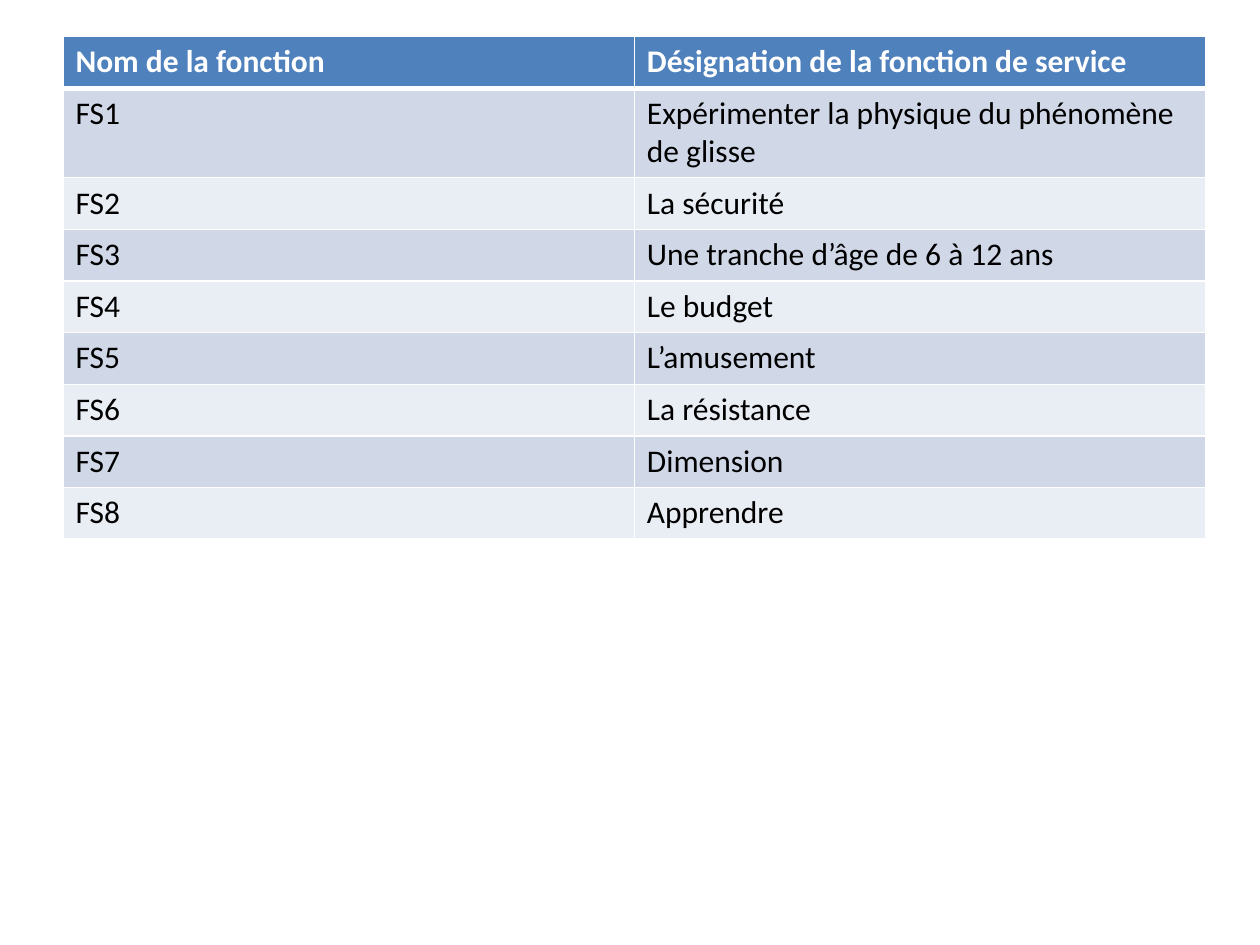
import pptx
import pptx.util
import pptx.dml.color
import pptx.oxml
from dataclasses import dataclass
from lxml import etree
from pptx.util import Inches


@dataclass(frozen=True)
class Theme:
    font: str = "Calibri"
    size: int = 18
    header_fill: str = "4F81BD"
    header_text: str = "FFFFFF"
    body_text: str = "000000"
    bands: tuple = ("D0D8E8", "E9EDF4")
    border: str = "FFFFFF"
    thin: int = 1
    thick: int = 3


THEME = Theme()

HEADER = ("Nom de la fonction", "Désignation de la fonction de service")
SERVICES = (
    "Expérimenter la physique du phénomène de glisse",
    "La sécurité",
    "Une tranche d’âge de 6 à 12 ans",
    "Le budget",
    "L’amusement",
    "La résistance",
    "Dimension",
    "Apprendre",
)


def rgb(color):
    return pptx.dml.color.RGBColor.from_string(color)


def add_text(tf, text, *, color, bold=False):
    p = tf.paragraphs[0]
    r = p.add_run()
    r.text = text
    r.font.name = THEME.font
    r.font.size = pptx.util.Pt(THEME.size)
    r.font.bold = bold
    r.font.color.rgb = rgb(color)


def set_borders(cell, **widths):
    """Draw the cell's edges; widths in points, keyed L, R, T and B."""
    tc_pr = cell._tc.get_or_add_tcPr()
    for i, edge in enumerate("LRTB"):
        width = pptx.util.Pt(widths.get(edge, THEME.thin))
        ln = pptx.oxml.parse_xml(
            '<a:ln%s xmlns:a="http://schemas.openxmlformats.org/drawingml/2006/main"'
            ' w="%d"><a:solidFill><a:srgbClr val="%s"/></a:solidFill></a:ln%s>'
            % (edge, width, THEME.border, edge)
        )
        # Borders come before the fill in the cell properties
        tc_pr.insert(i, ln)


def add_function_table(s, left, top, width, row_height):
    rows = [HEADER] + [(f"FS{n}", text) for n, text in enumerate(SERVICES, 1)]
    table = s.shapes.add_table(
        len(rows), len(HEADER), left, top, width, row_height * len(rows)
    ).table
    for row in table.rows:
        row.height = row_height

    for i, values in enumerate(rows):
        header = i == 0
        fill = THEME.header_fill if header else THEME.bands[(i - 1) % 2]
        color = THEME.header_text if header else THEME.body_text
        # A thick rule separates the header from the body
        rule = {0: {"B": THEME.thick}, 1: {"T": THEME.thick}}.get(i, {})
        for j, text in enumerate(values):
            cell = table.cell(i, j)
            cell.fill.solid()
            cell.fill.fore_color.rgb = rgb(fill)
            set_borders(cell, **rule)
            add_text(cell.text_frame, text, color=color, bold=header)


def main():
    prs = pptx.Presentation()
    prs.slide_width, prs.slide_height = Inches(10), Inches(7.5)
    s = prs.slides.add_slide(prs.slide_layouts[6])

    # Table of service functions
    add_function_table(s, Inches(0.5), Inches(0.29), Inches(9.07), Inches(0.41))
    prs.save("out.pptx")


if __name__ == "__main__":
    main()
